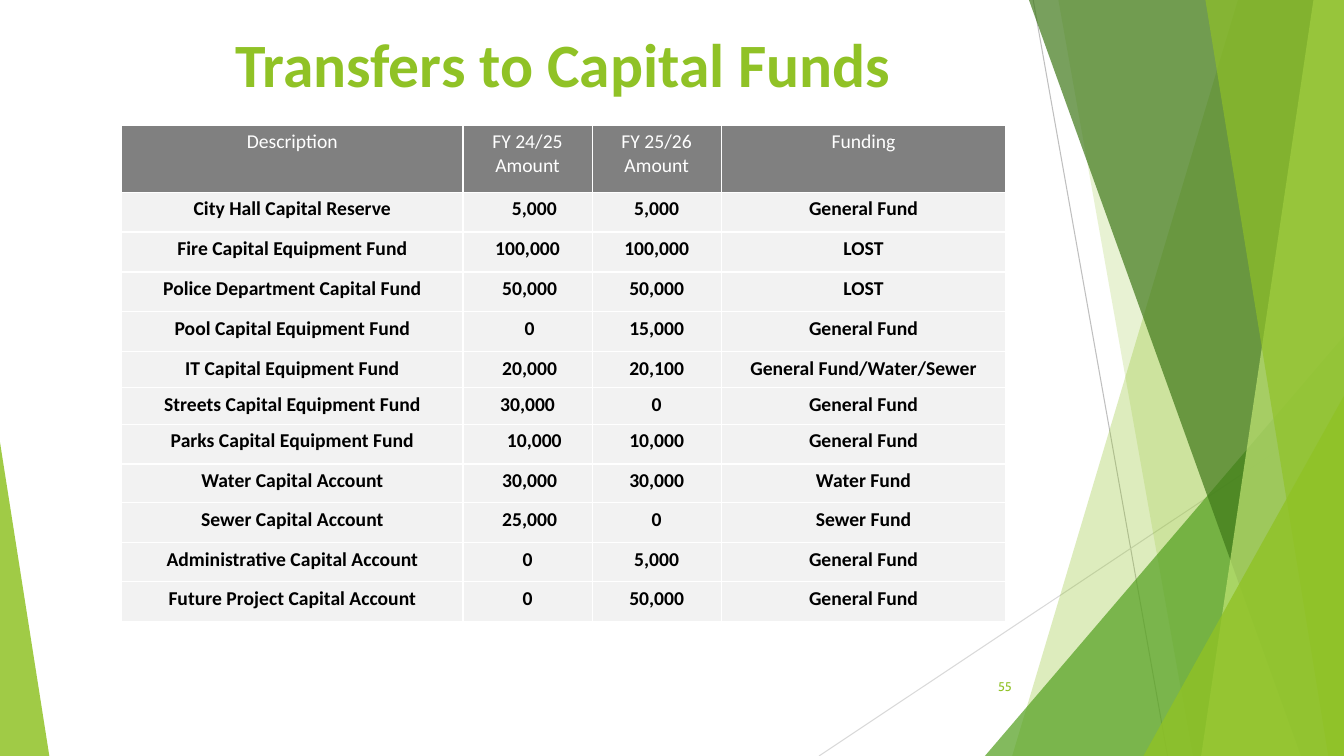
from collections import namedtuple

from lxml.etree import SubElement
from pptx import Presentation
from pptx.dml.color import RGBColor
from pptx.enum.shapes import MSO_CONNECTOR, MSO_SHAPE
from pptx.enum.text import MSO_ANCHOR, PP_ALIGN
from pptx.oxml import parse_xml
from pptx.oxml.ns import nsdecls, qn
from pptx.util import Pt

PX = 9525
Box = namedtuple("Box", "left top width height")

SLIDE = Box(0, 0, 1280, 720)
FACETS = Box(780, 0, 500, 720)
CORNER = Box(0, 421, 47, 299)
TITLE = Box(205, 17, 663, 72)
TABLE = Box(116, 119, 842, 473)
PAGE_NUMBER = Box(901, 635, 72, 38)

LIME = RGBColor(0x90, 0xC2, 0x26)
GREEN = RGBColor(0x54, 0xA0, 0x21)
FOREST = RGBColor(0x3F, 0x78, 0x19)
PALE_LIME = RGBColor(0xC0, 0xE4, 0x74)
SILVER = RGBColor(0xBF, 0xBF, 0xBF)
LIGHT_SILVER = RGBColor(0xD9, 0xD9, 0xD9)
HEADER_GRAY = RGBColor(0x80, 0x80, 0x80)
ROW_GRAY = RGBColor(0xF2, 0xF2, 0xF2)
WHITE = RGBColor(0xFF, 0xFF, 0xFF)
BLACK = RGBColor(0, 0, 0)

COLUMN_WIDTHS = [325, 123, 123, 271]
ROW_HEIGHTS = [64, 38, 38, 38, 38, 34, 35, 38, 37, 38, 37, 38]
TRANSFERS = [
    ("Description", "FY 24/25 Amount", "FY 25/26 Amount", "Funding"),
    ("City Hall Capital Reserve", "5,000", "5,000", "General Fund"),
    ("Fire Capital Equipment Fund", "100,000", "100,000", "LOST"),
    ("Police Department Capital Fund", "50,000", "50,000", "LOST"),
    ("Pool Capital Equipment Fund", "0", "15,000", "General Fund"),
    ("IT Capital Equipment Fund", "20,000", "20,100", "General Fund/Water/Sewer"),
    ("Streets Capital Equipment Fund", "30,000", "0", "General Fund"),
    ("Parks Capital Equipment Fund", "10,000", "10,000", "General Fund"),
    ("Water Capital Account", "30,000", "30,000", "Water Fund"),
    ("Sewer Capital Account", "25,000", "0", "Sewer Fund"),
    ("Administrative Capital Account", "0", "5,000", "General Fund"),
    ("Future Project Capital Account", "0", "50,000", "General Fund"),
]
# Extra left margin of the FY 24/25 amounts, by row
AMOUNT_INDENTS = {1: 13, 3: 4, 4: 4, 5: 4, 7: 13, 8: 4, 9: 4}


def emu(*lengths):
    return [length * PX for length in lengths]


def paint(shape, color, opacity):
    """Give a shape a translucent fill, with no line and no shadow."""
    shape.shadow.inherit = False
    shape.line.fill.background()
    shape.fill.solid()
    shape.fill.fore_color.rgb = color
    swatch = shape.fill._xPr.find(qn("a:solidFill"))[0]
    SubElement(swatch, qn("a:alpha"), val=str(opacity * 1000))


def format_text(frame, size, font, color, align, bold=False):
    for para in frame.paragraphs:
        para.alignment = align
        for span in para.runs:
            span.font.size = Pt(size)
            span.font.name = font
            span.font.color.rgb = color
            span.font.bold = bold


def add_hairline(page, box, start, end, color):
    ends = emu(box.left + start[0], box.top + start[1],
               box.left + end[0], box.top + end[1])
    line = page.shapes.add_connector(MSO_CONNECTOR.STRAIGHT, *ends)
    line.line.color.rgb = color
    line.line.width = Pt(0.75)
    SubElement(line._element.spPr, qn("a:effectLst"))


def add_ribbon(page, box, top_x, bottom_x, color, opacity):
    """Fill the box to the right of a slanted edge running from top to bottom."""
    right, bottom = box.left + box.width, box.top + box.height
    outline = page.shapes.build_freeform(*emu(box.left + top_x, box.top), scale=1.0)
    corners = [(right, box.top), (right, bottom), (box.left + bottom_x, bottom)]
    outline.add_line_segments([emu(*corner) for corner in corners], close=True)
    paint(outline.convert_to_shape(), color, opacity)


def add_wedge(page, box, apex, color, opacity):
    wedge = page.shapes.add_shape(MSO_SHAPE.ISOSCELES_TRIANGLE, *emu(*box))
    wedge.adjustments[0] = apex
    paint(wedge, color, opacity)


def add_facets(page, box):
    def add_right_wedge(left, top, color, opacity):
        wedge = Box(box.left + left, box.top + top, box.width - left, box.height - top)
        add_wedge(page, wedge, 1, color, opacity)

    add_hairline(page, box, (204, 0), (332, box.height), SILVER)
    add_hairline(page, box, (box.width, 387), (0, box.height), LIGHT_SILVER)
    add_ribbon(page, box, 399, 184, LIME, 30)
    add_ribbon(page, box, 228, 356, LIME, 20)
    add_right_wedge(158, 320, GREEN, 72)
    add_ribbon(page, box, 200, 459, FOREST, 70)
    add_ribbon(page, box, 471, 364, PALE_LIME, 70)
    add_ribbon(page, box, 368, 485, LIME, 65)
    add_right_wedge(309, 377, LIME, 80)


def add_title(page, box):
    title = page.shapes.add_textbox(*emu(*box))
    frame = title.text_frame
    frame.word_wrap = True
    frame.margin_top = 8 * PX
    frame.text = "Transfers to Capital Funds"
    format_text(frame, 44, "Calibri", LIME, PP_ALIGN.CENTER, bold=True)


def add_page_number(page, box):
    number = page.shapes.add_textbox(*emu(*box))
    frame = number.text_frame
    frame.word_wrap = True
    frame.vertical_anchor = MSO_ANCHOR.MIDDLE
    frame.text = "55"
    format_text(frame, 9, "Cabin", LIME, PP_ALIGN.RIGHT)


def add_borders(cell):
    properties = cell._tc.get_or_add_tcPr()
    for position, side in enumerate(("lnL", "lnR", "lnT", "lnB")):
        properties.insert(position, parse_xml(
            f'<a:{side} {nsdecls("a")} w="{Pt(1)}"><a:solidFill>'
            f'<a:srgbClr val="{WHITE}"/></a:solidFill></a:{side}>'))


def add_transfers_table(page, box):
    table = page.shapes.add_table(len(ROW_HEIGHTS), len(COLUMN_WIDTHS), *emu(*box)).table
    table.horz_banding = False
    for column, width in zip(table.columns, COLUMN_WIDTHS):
        column.width = width * PX
    for row, height in zip(table.rows, ROW_HEIGHTS):
        row.height = height * PX
    for row_index, values in enumerate(TRANSFERS):
        is_header = row_index == 0
        for column_index, value in enumerate(values):
            cell = table.cell(row_index, column_index)
            cell.text = value
            cell.fill.solid()
            cell.fill.fore_color.rgb = HEADER_GRAY if is_header else ROW_GRAY
            format_text(cell.text_frame, 14, "Calibri", WHITE if is_header else BLACK,
                        PP_ALIGN.CENTER, bold=not is_header)
            add_borders(cell)
    for row_index, indent in AMOUNT_INDENTS.items():
        cell = table.cell(row_index, 1)
        cell.margin_left = cell.margin_left + indent * PX


def main():
    deck = Presentation()
    deck.slide_width, deck.slide_height = emu(SLIDE.width, SLIDE.height)
    page = deck.slides.add_slide(deck.slide_layouts[6])
    add_facets(page, FACETS)
    add_wedge(page, CORNER, 0, LIME, 85)
    add_title(page, TITLE)
    add_page_number(page, PAGE_NUMBER)
    add_transfers_table(page, TABLE)
    deck.save("out.pptx")


if __name__ == "__main__":
    main()
